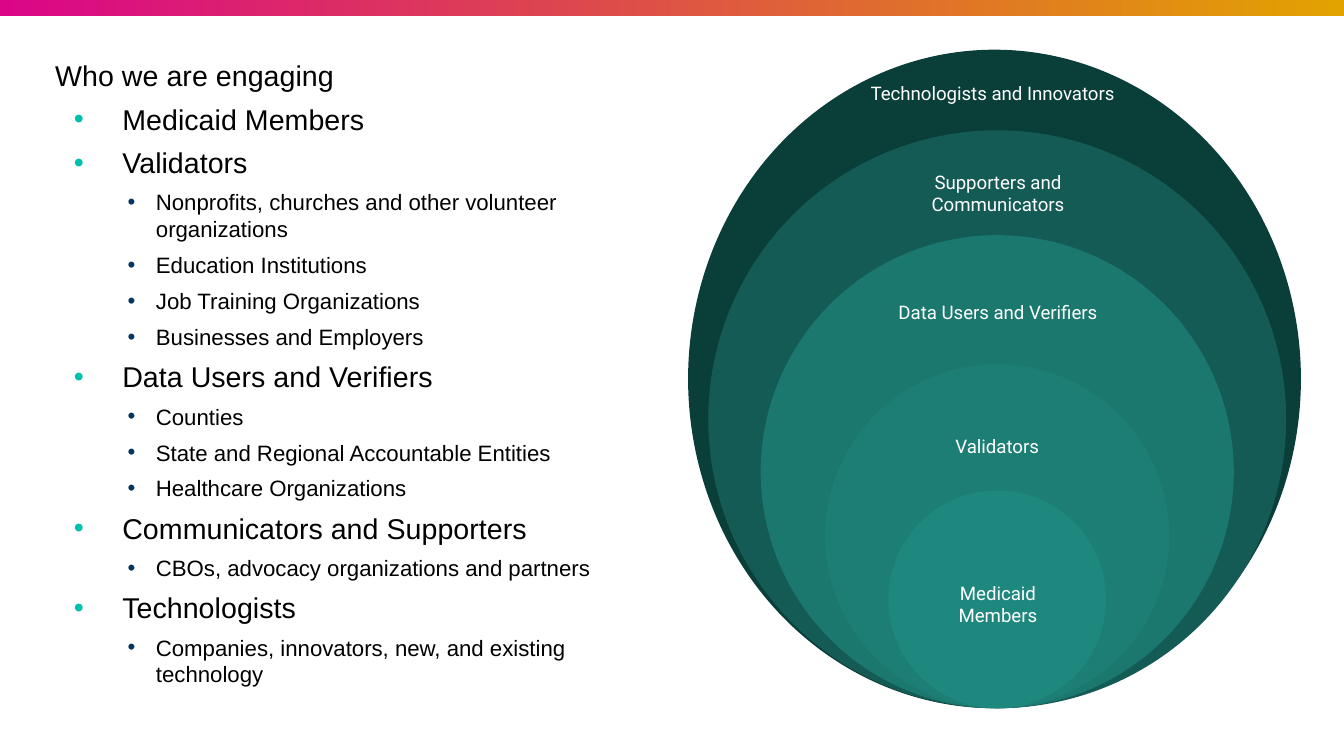
from lxml import etree
from pptx import Presentation
from pptx.dml.color import RGBColor
from pptx.enum.shapes import MSO_SHAPE
from pptx.enum.text import MSO_ANCHOR, MSO_AUTO_SIZE, PP_ALIGN
from pptx.oxml.ns import qn
from pptx.util import Inches, Pt

RECTANGLE = MSO_SHAPE.RECTANGLE
OVAL = MSO_SHAPE.OVAL
TOP = MSO_ANCHOR.TOP
MIDDLE = MSO_ANCHOR.MIDDLE
NO_AUTOFIT = MSO_AUTO_SIZE.NONE
LEFT = PP_ALIGN.LEFT
CENTER = PP_ALIGN.CENTER

COLORS = {
    "bar_start": "DA0588",
    "bar_end": "E2A200",
    "text": "000000",
    "label": "FFFFFF",
    "group_bullet": "00C0B0",
    "member_bullet": "023661",
    "technologists": "0A3E39",
    "supporters": "155B55",
    "data_users": "1B786F",
    "validators": "1D7E75",
    "members": "1F887E",
}

HEADING = "Who we are engaging"
AUDIENCES = [
    ("Medicaid Members", []),
    ("Validators", [
        "Nonprofits, churches and other volunteer organizations",
        "Education Institutions",
        "Job Training Organizations",
        "Businesses and Employers",
    ]),
    ("Data Users and Verifiers", [
        "Counties",
        "State and Regional Accountable Entities",
        "Healthcare Organizations",
    ]),
    ("Communicators and Supporters", ["CBOs, advocacy organizations and partners"]),
    ("Technologists", ["Companies, innovators, new, and existing technology"]),
]

RINGS = [
    {"text": "Technologists and Innovators", "color": "technologists", "center": 7.4,
     "size": (4.56, 4.9), "label": (6.33, 0.32, 2.11, 0.75)},
    {"text": "Supporters and Communicators", "color": "supporters", "center": 7.42,
     "size": (4.3, 4.3), "label": (6.37, 1.06, 2.11, 0.75)},
    {"text": "Data Users and Verifiers", "color": "data_users", "center": 7.42,
     "size": (3.52, 3.52), "label": (6.56, 2.01, 1.73, 0.62)},
    {"text": "Validators", "color": "validators", "center": 7.42,
     "size": (2.56, 2.56), "label": (6.61, 3.03, 1.62, 0.58)},
    {"text": "Medicaid Members", "color": "members", "center": 7.42,
     "size": (1.62, 1.62), "label": (6.75, 4.14, 1.35, 0.71)},
]
RINGS_BOTTOM = 5.27

LEVELS = {
    "heading": {"level": 0, "margin": 0, "indent": 0, "size": 15.3, "bullet": None},
    "group": {"level": 0, "margin": 0.5, "indent": -0.36, "size": 15.3, "bullet": "group_bullet"},
    "member": {"level": 1, "margin": 0.75, "indent": -0.21, "size": 11.9, "bullet": "member_bullet"},
}


def rgb(name):
    return RGBColor.from_string(COLORS[name])


def set_frame(frame, side, vertical, anchor):
    frame.word_wrap = True
    frame.auto_size = NO_AUTOFIT
    frame.vertical_anchor = anchor
    frame.margin_left = frame.margin_right = Inches(side)
    frame.margin_top = frame.margin_bottom = Inches(vertical)


def add_run(paragraph, text, font_name, size, color):
    run = paragraph.add_run()
    run.text = text
    run.font.name = font_name
    run.font.size = Pt(size)
    run.font.color.rgb = rgb(color)


def set_bullet(paragraph, style):
    properties = paragraph._p.get_or_add_pPr()
    properties.set("marL", str(Inches(style["margin"])))
    properties.set("indent", str(Inches(style["indent"])))
    if style["bullet"] is None:
        etree.SubElement(properties, qn("a:buNone"))
        return
    bullet_color = etree.SubElement(properties, qn("a:buClr"))
    etree.SubElement(bullet_color, qn("a:srgbClr"), val=COLORS[style["bullet"]])
    etree.SubElement(properties, qn("a:buFont"), typeface="Arial")
    etree.SubElement(properties, qn("a:buChar"), char="•")


def add_bar(slide):
    bar = slide.shapes.add_shape(RECTANGLE, Inches(-0.03), Inches(-0.01), Inches(10.05), Inches(0.13))
    bar.shadow.inherit = False
    bar.line.fill.background()
    bar.fill.gradient()
    bar.fill.gradient_angle = 0
    for stop, name in zip(bar.fill.gradient_stops, ("bar_start", "bar_end")):
        stop.color.rgb = rgb(name)


def fill_body(body):
    body.left, body.top, body.width, body.height = map(Inches, (0.34, 0.39, 4.66, 4.96))
    frame = body.text_frame
    set_frame(frame, 0.07, 0.04, TOP)
    lines = [("heading", HEADING)]
    for group, members in AUDIENCES:
        lines.append(("group", group))
        lines.extend(("member", member) for member in members)
    for index, (kind, text) in enumerate(lines):
        style = LEVELS[kind]
        paragraph = frame.paragraphs[0] if index == 0 else frame.add_paragraph()
        set_bullet(paragraph, style)
        paragraph.level = style["level"]
        paragraph.alignment = LEFT
        paragraph.line_spacing = 1.0
        paragraph.space_before = Pt(5 if index else 0)
        paragraph.space_after = Pt(0)
        add_run(paragraph, text, "Arial", style["size"], "text")


def add_rings(slide):
    group = slide.shapes.add_group_shape()
    for ring in RINGS:
        width, height = ring["size"]
        left = ring["center"] - width / 2
        circle = group.shapes.add_shape(
            OVAL, Inches(left), Inches(RINGS_BOTTOM - height), Inches(width), Inches(height))
        circle.shadow.inherit = False
        circle.fill.solid()
        circle.fill.fore_color.rgb = rgb(ring["color"])
        circle.line.fill.background()
        label = group.shapes.add_textbox(*map(Inches, ring["label"]))
        set_frame(label.text_frame, 0.1, 0.1, MIDDLE)
        paragraph = label.text_frame.paragraphs[0]
        paragraph.alignment = CENTER
        add_run(paragraph, ring["text"], "Roboto", 10, "label")


def main():
    presentation = Presentation()
    presentation.slide_width = Inches(10)
    presentation.slide_height = Inches(10) * 9 // 16
    slide = presentation.slides.add_slide(presentation.slide_layouts[1])
    title = slide.shapes.title._element
    title.getparent().remove(title)
    add_bar(slide)
    fill_body(slide.placeholders[1])
    add_rings(slide)
    presentation.save("out.pptx")


if __name__ == "__main__":
    main()
